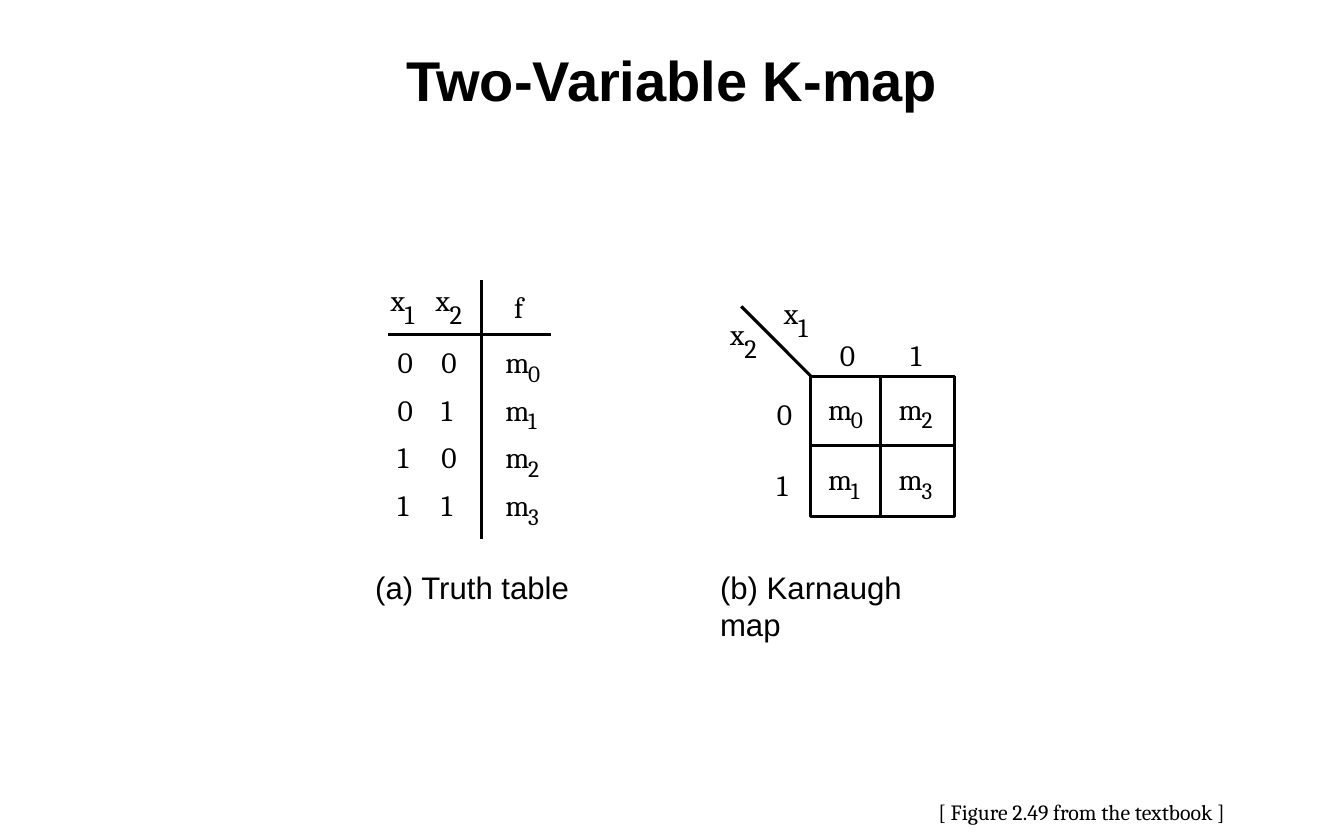
from lxml import etree
from pptx import Presentation
from pptx.dml.color import RGBColor
from pptx.enum.shapes import MSO_CONNECTOR, MSO_SHAPE
from pptx.enum.text import MSO_ANCHOR, PP_ALIGN
from pptx.oxml.ns import qn
from pptx.util import Cm, Pt

BLACK = RGBColor(0, 0, 0)
WHITE = RGBColor(255, 255, 255)
LINE = MSO_CONNECTOR.STRAIGHT
RECT = MSO_SHAPE.RECTANGLE
MIDDLE = MSO_ANCHOR.MIDDLE
CENTER = PP_ALIGN.CENTER

HEAD = {"name": "Arial", "size": Pt(36), "bold": True}
LABEL = {"name": "Arial", "size": Pt(20)}
MATH = {"name": "Cambria", "size": Pt(19)}
VAR_SUB = {"name": "Cambria", "size": Pt(17)}
TERM_SUB = {"name": "Cambria", "size": Pt(15)}
NOTE = {"name": "Cambria", "size": Pt(14)}
FLUSH = {"margin_left": 0, "margin_right": 0, "margin_top": 0,
         "margin_bottom": 0, "word_wrap": True}

ROW = 1.08
CELL = 1.58
PITCH = 1.6


def style(item, form):
    for key, value in form.items():
        setattr(item, key, value)


def write(frame, words, form):
    para = frame.paragraphs[0]
    run = para.add_run()
    run.text = words
    style(run.font, form)
    run.font.color.rgb = BLACK
    return para


def add_title(slide, words):
    title = slide.shapes.title
    style(title, {"left": Cm(0), "top": Cm(0.84),
                  "width": Cm(30.48), "height": Cm(1.9)})
    title.text_frame.vertical_anchor = MIDDLE
    write(title.text_frame, words, HEAD).alignment = CENTER


def add_text(slide, words, x, y, form=MATH, width=0.6, height=0.81, frame=FLUSH):
    box = slide.shapes.add_textbox(Cm(x), Cm(y), Cm(width), Cm(height))
    style(box.text_frame, frame)
    write(box.text_frame, words, form)


def add_var(slide, index, x, y):
    """Input variable x with its lowered index."""
    add_text(slide, "x", x, y)
    add_text(slide, index, x + 0.32, y + 0.37, VAR_SUB)


def add_term(slide, index, x, y):
    """Minterm m with its lowered index."""
    add_text(slide, "m", x, y, width=0.75)
    add_text(slide, str(index), x + 0.52, y + 0.34, TERM_SUB)


def add_line(slide, x1, y1, x2, y2):
    line = slide.shapes.add_connector(LINE, Cm(x1), Cm(y1), Cm(x2), Cm(y2))
    line.line.color.rgb = BLACK
    line.line.width = Pt(2)
    etree.SubElement(line._element.spPr, qn("a:effectLst"))


def add_frame(slide, x, y, width, height):
    box = slide.shapes.add_shape(RECT, Cm(x), Cm(y), Cm(width), Cm(height))
    box.shadow.inherit = False
    box.fill.solid()
    box.fill.fore_color.rgb = WHITE
    box.line.color.rgb = BLACK
    box.line.width = Pt(2)


def add_truth(slide):
    add_line(slide, 8.81, 7.59, 12.5, 7.59)
    add_line(slide, 10.92, 6.35, 10.92, 12.22)
    add_var(slide, "1", 8.86, 6.4)
    add_var(slide, "2", 9.88, 6.4)
    add_text(slide, "f", 11.66, 6.55)
    for index in range(4):
        y = 7.8 + index * ROW
        for x, bit in zip((9.02, 10.01), f"{index:02b}"):
            add_text(slide, bit, x, y)
        add_term(slide, index, 11.46, y)
    add_text(slide, "(a) Truth table", 8.51, 12.88, LABEL, 4.8, 0.84)


def add_kmap(slide):
    left, top, width, height = 18.39, 8.53, 3.25, 3.18
    add_frame(slide, left, top, width, height)
    add_line(slide, left, top + CELL, left + width, top + CELL)
    add_line(slide, left + CELL, top, left + CELL, top + height)
    add_line(slide, left - CELL, top - CELL, left, top)
    add_var(slide, "1", 17.78, 6.68)
    add_var(slide, "2", 16.56, 7.16)
    for i in range(2):
        add_text(slide, str(i), 19.05 + i * PITCH, 7.65)
        add_text(slide, str(i), 17.62, 8.99 + i * PITCH)
        for j in range(2):
            add_term(slide, 2 * i + j, 18.78 + i * PITCH, 8.86 + j * PITCH)
    add_text(slide, "(b) Karnaugh map", 16.33, 12.88, LABEL, 5.2, 1.7)


def main():
    deck = Presentation()
    deck.slide_width, deck.slide_height = Cm(30.48), Cm(19.05)
    slide = deck.slides.add_slide(deck.slide_layouts[5])
    add_title(slide, "Two-Variable K-map")
    add_truth(slide)
    add_kmap(slide)
    add_text(slide, "[ Figure 2.49 from the textbook ]", 21.03, 17.98,
             NOTE, 7.3, 0.86, {"word_wrap": True})
    deck.save("out.pptx")


if __name__ == "__main__":
    main()
